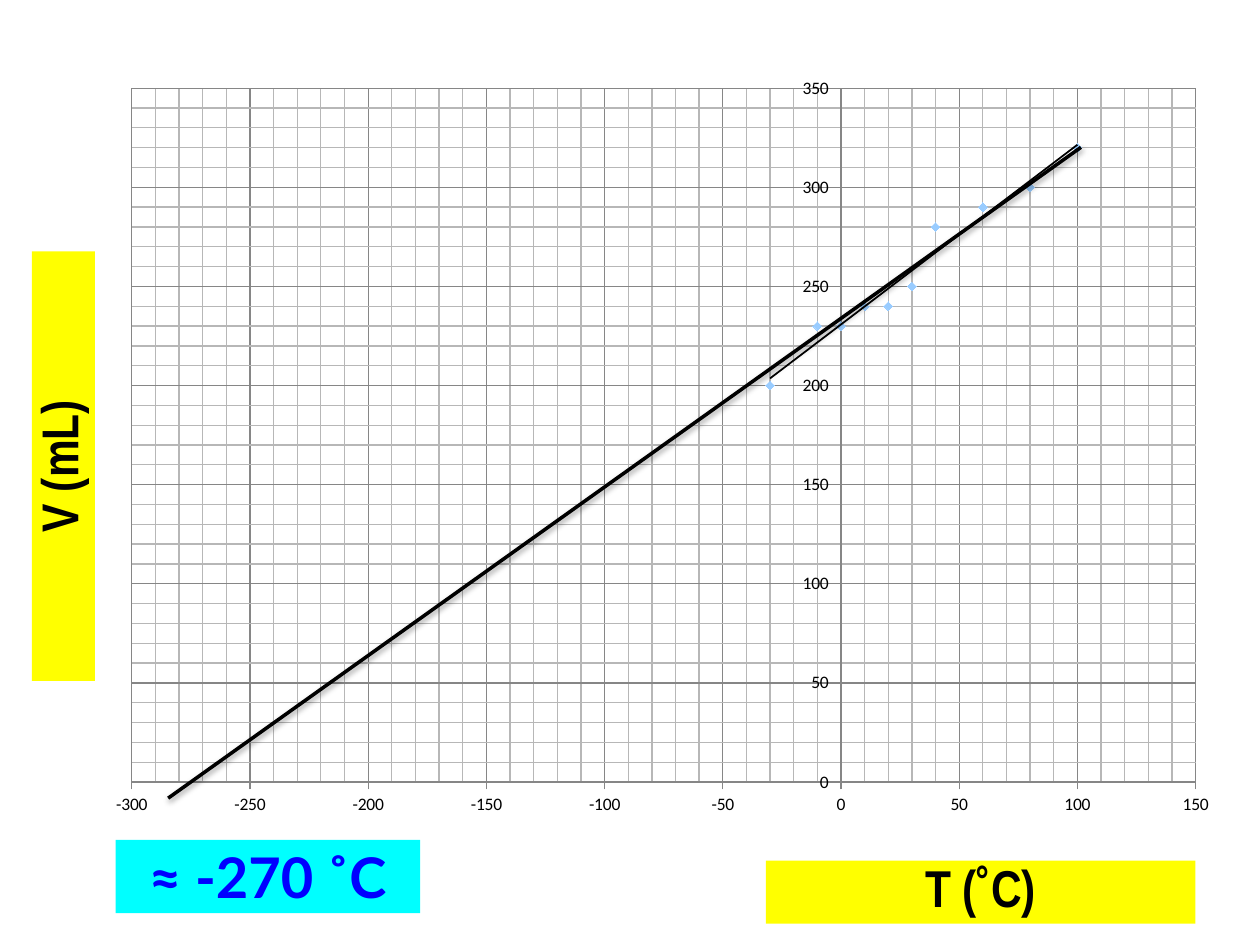
from lxml import etree
from pptx import Presentation
from pptx.chart.data import XyChartData
from pptx.dml.color import RGBColor
from pptx.enum.chart import XL_CHART_TYPE, XL_MARKER_STYLE, XL_TICK_MARK
from pptx.enum.shapes import MSO_CONNECTOR, MSO_SHAPE
from pptx.enum.text import MSO_ANCHOR, PP_ALIGN
from pptx.oxml import parse_xml
from pptx.oxml.ns import nsdecls, qn
from pptx.util import Cm, Pt

SCATTER = XL_CHART_TYPE.XY_SCATTER
DIAMOND = XL_MARKER_STYLE.DIAMOND
CROSS = XL_TICK_MARK.CROSS
NO_TICK = XL_TICK_MARK.NONE
STRAIGHT = MSO_CONNECTOR.STRAIGHT
RECT = MSO_SHAPE.RECTANGLE
MIDDLE = MSO_ANCHOR.MIDDLE
CENTER = PP_ALIGN.CENTER

COLORS = {
    "black": "000000",
    "yellow": "FFFF00",
    "cyan": "00FFFF",
    "blue": "0000FF",
    "marker": "99CCFF",
    "major": "868686",
    "minor": "B7B7B7",
}


def rgb(name):
    return RGBColor.from_string(COLORS[name])


prs = Presentation()
prs.slide_width, prs.slide_height = Cm(25.4), Cm(19.05)
s = prs.slides.add_slide(prs.slide_layouts[6])

temperatures = [100, 80, 60, 40, 30, 20, 10, 0, -10, -30]
volumes = [320, 300, 290, 280, 250, 240, 240, 230, 230, 200]
data = XyChartData()
series_data = data.add_series("Series 1")
for t, v in zip(temperatures, volumes):
    series_data.add_data_point(t, v)

chart = s.shapes.add_chart(SCATTER, Cm(1.9), Cm(1.27), Cm(22.94), Cm(15.44), data).chart
chart.has_legend = False
chart.has_title = False
chart.font.name = "Calibri"
chart.font.size = Pt(10)
chart.font.color.rgb = rgb("black")

for axis, low, high in ((chart.category_axis, -300, 150), (chart.value_axis, 0, 350)):
    axis.minimum_scale, axis.maximum_scale = low, high
    axis.major_unit, axis.minor_unit = 50, 10
    axis.major_tick_mark, axis.minor_tick_mark = CROSS, NO_TICK
    axis.has_major_gridlines = axis.has_minor_gridlines = True
    axis.tick_labels.number_format = "General"
    axis.tick_labels.number_format_is_linked = False
    for line, color in (
        (axis.format.line, "major"),
        (axis.major_gridlines.format.line, "major"),
    ):
        line.color.rgb = rgb(color)
        line.width = Pt(0.75)
    minor = axis._element.find(qn("c:minorGridlines"))
    minor.append(parse_xml(
        f'<c:spPr {nsdecls("c", "a")}><a:ln w="9525"><a:solidFill>'
        f'<a:srgbClr val="{COLORS["minor"]}"/></a:solidFill></a:ln></c:spPr>'
    ))

series = chart.plots[0].series[0]
series.smooth = False
series.format.line.fill.background()
series.marker.style = DIAMOND
series.marker.size = 5
series.marker.format.fill.solid()
series.marker.format.fill.fore_color.rgb = rgb("marker")
series.marker.format.line.fill.background()
series._element.find(qn("c:xVal")).addprevious(parse_xml(
    f'<c:trendline {nsdecls("c", "a")}><c:spPr><a:ln w="12700"><a:solidFill>'
    f'<a:srgbClr val="{COLORS["black"]}"/></a:solidFill></a:ln></c:spPr>'
    '<c:trendlineType val="linear"/><c:dispRSqr val="0"/><c:dispEq val="0"/></c:trendline>'
))

plot_area = chart._chartSpace.chart.plotArea
for old in plot_area.findall(qn("c:layout")):
    plot_area.remove(old)
layout = parse_xml(f'<c:layout {nsdecls("c")}><c:manualLayout/></c:layout>')
for tag, value in (
    ("layoutTarget", "inner"), ("xMode", "edge"), ("yMode", "edge"),
    ("x", "0.033"), ("y", "0.033"), ("w", "0.935"), ("h", "0.906"),
):
    etree.SubElement(layout[0], qn(f"c:{tag}")).set("val", value)
plot_area.insert(0, layout)

fit = s.shapes.add_connector(STRAIGHT, Cm(21.79), Cm(2.97), Cm(3.39), Cm(16.09))
fit.line.color.rgb = rgb("black")
fit.line.width = Pt(2)
fit._element.spPr.append(parse_xml(
    f'<a:effectLst {nsdecls("a")}><a:outerShdw blurRad="39370" dist="20320" dir="5400000" '
    f'rotWithShape="0"><a:srgbClr val="{COLORS["black"]}"><a:alpha val="38000"/>'
    '</a:srgbClr></a:outerShdw></a:effectLst>'
))

labels = [
    ("T (˚C)", 15.44, 17.35, 8.66, 1.27, 0, "yellow", "black", "Arial Narrow", 29.6, 0.8),
    ("V (mL)", -3.05, 8.76, 8.66, 1.27, 270, "yellow", "black", "Arial Narrow", 29.6, 0.8),
    ("≈ -270 ˚C", 2.33, 16.93, 6.14, 1.48, 0, "cyan", "blue", "Lato", 32, 1.0),
]
for text, x, y, w, h, angle, fill, color, font, size, spacing in labels:
    sp = s.shapes.add_shape(RECT, Cm(x), Cm(y), Cm(w), Cm(h))
    sp.rotation = angle
    sp.shadow.inherit = False
    sp.fill.solid()
    sp.fill.fore_color.rgb = rgb(fill)
    sp.line.fill.background()
    tf = sp.text_frame
    tf.word_wrap = True
    tf.vertical_anchor = MIDDLE
    p = tf.paragraphs[0]
    p.alignment = CENTER
    p.line_spacing = spacing
    r = p.add_run()
    r.text = text
    r.font.name = font
    r.font.size = Pt(size)
    r.font.bold = True
    r.font.color.rgb = rgb(color)

prs.save("out.pptx")
